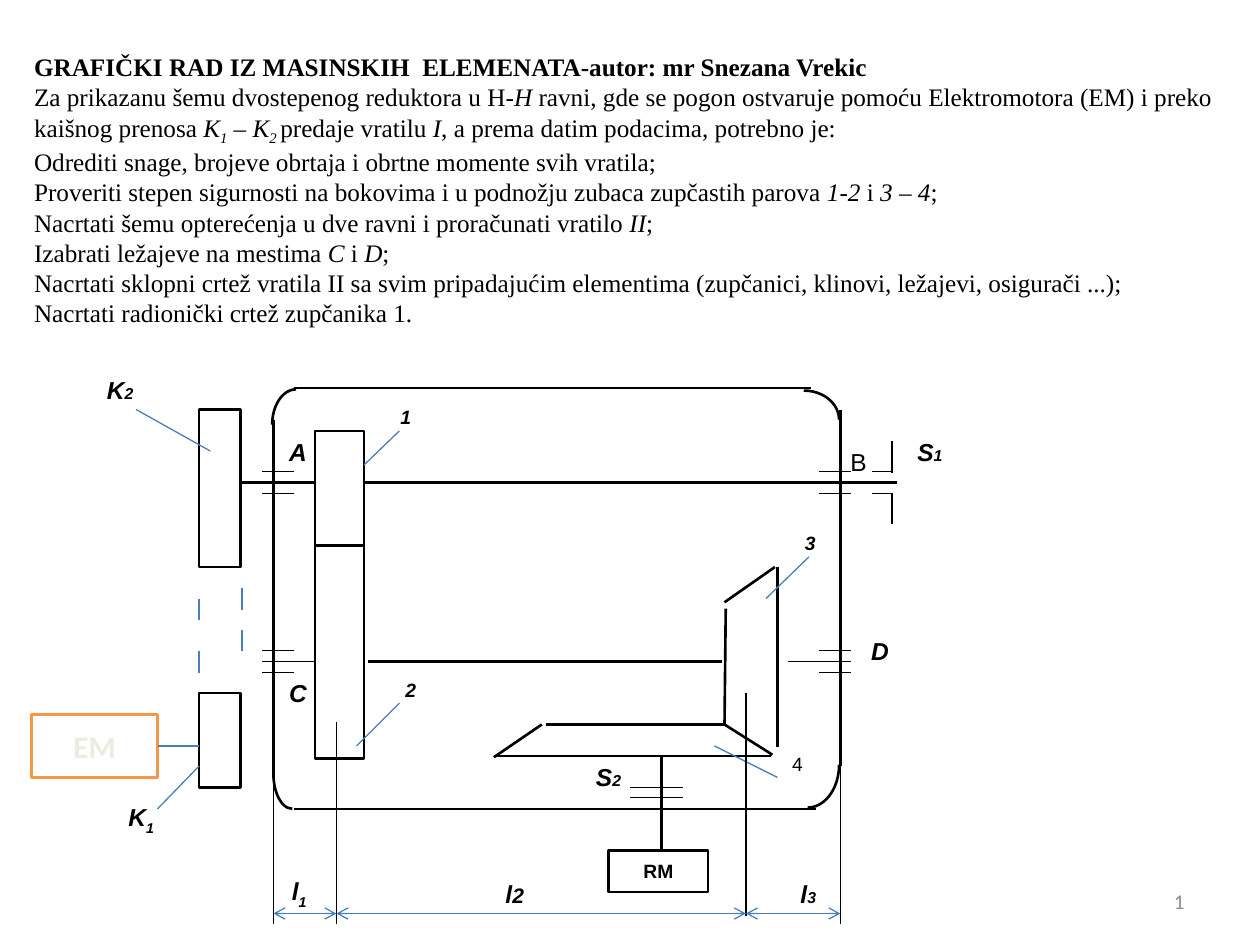
from dataclasses import dataclass
from itertools import pairwise
from lxml.etree import SubElement
from pptx import Presentation
from pptx.dml.color import RGBColor
from pptx.enum.shapes import MSO_CONNECTOR, MSO_SHAPE
from pptx.enum.text import MSO_ANCHOR, MSO_AUTO_SIZE, PP_ALIGN
from pptx.oxml.ns import qn
from pptx.util import Inches, Pt


@dataclass(frozen=True)
class Theme:
    """Colours, fonts and sizes of the slide."""
    ink: str = "000000"
    paper: str = "FFFFFF"
    blue: str = "4B7EBC"
    orange: str = "F79646"
    cream: str = "EEECE1"
    gray: str = "8C8C8C"
    sans: str = "Arial"
    serif: str = "Times New Roman"
    plain: str = "Calibri"
    task: float = 14.4
    name: float = 14
    mark: float = 11
    page: float = 12
    motor: float = 18
    thin: float = 0.75
    bold: float = 1.5


T = Theme()
TASK = (
    "Za prikazanu šemu dvostepenog reduktora u H*-H* ravni, gde se pogon ostvaruje pomoću "
    "Elektromotora (EM) i preko kaišnog prenosa *K~1~ – K~2 ~*predaje vratilu *I*, "
    "a prema datim podacima, potrebno je:",
    "Odrediti snage, brojeve obrtaja i obrtne momente svih vratila;",
    "Proveriti stepen sigurnosti na bokovima i u podnožju zubaca zupčastih parova *1-2* i *3 – 4*;",
    "Nacrtati šemu opterećenja u dve ravni i proračunati vratilo *II*;",
    "Izabrati ležajeve na mestima *C* i *D*;",
    "Nacrtati sklopni crtež vratila II sa svim pripadajućim elementima "
    "(zupčanici, klinovi, ležajevi, osigurači ...);",
    "Nacrtati radionički crtež zupčanika 1.",
)


def write(para, text, size=T.name, face=T.sans, color=T.ink, bold=False, slant=False, sub=None, drop=-30):
    """Add text where *stars* flip italics and ~tildes~ enclose a small or lowered index."""
    for i, part in enumerate(text.split("*")):
        for j, bit in enumerate(part.split("~")):
            if not bit:
                continue
            run = para.add_run()
            run.text = bit
            font = run.font
            font.name, font.bold, font.italic = face, bold, slant != bool(i % 2)
            font.size = Pt(sub if j % 2 and sub else size)
            font.color.rgb = RGBColor.from_string(color)
            if j % 2 and not sub:
                font._element.set("baseline", str(drop * 1000))


@dataclass
class Pane:
    """A region whose parts are placed from its left top corner."""
    slide: object
    left: float
    top: float

    def spot(self, x, y):
        """Turn a point in the region into slide lengths."""
        return Inches(self.left + x), Inches(self.top + y)

    def line(self, x1, y1, x2, y2, color=T.ink, width=T.thin, arrows=False):
        """Draw a straight line."""
        link = self.slide.shapes.add_connector(
            MSO_CONNECTOR.STRAIGHT, *self.spot(x1, y1), *self.spot(x2, y2))
        link.line.color.rgb = RGBColor.from_string(color)
        link.line.width = Pt(width)
        if arrows:
            for end in ("a:headEnd", "a:tailEnd"):
                SubElement(link.line._ln, qn(end)).set("type", "arrow")
        SubElement(link._element.spPr, qn("a:effectLst"))

    def shape(self, kind, x, y, w, h, line=T.ink, width=T.bold):
        """Draw an outlined preset shape without shadow."""
        item = self.slide.shapes.add_shape(kind, *self.spot(x, y), Inches(w), Inches(h))
        item.shadow.inherit = False
        item.line.color.rgb = RGBColor.from_string(line)
        item.line.width = Pt(width)
        return item

    def rect(self, x, y, w, h, text="", line=T.ink, width=T.bold, **style):
        """Draw a white block, with centred text if any."""
        item = self.shape(MSO_SHAPE.RECTANGLE, x, y, w, h, line, width)
        item.fill.solid()
        item.fill.fore_color.rgb = RGBColor.from_string(T.paper)
        if text:
            para = item.text_frame.paragraphs[0]
            para.alignment = PP_ALIGN.CENTER
            write(para, text, bold=True, **style)

    def arc(self, x, y, rx, ry, start):
        """Draw a quarter ellipse about a centre."""
        item = self.shape(MSO_SHAPE.ARC, x - rx, y - ry, 2 * rx, 2 * ry)
        item.fill.background()
        item.adjustments[0] = start * 0.6
        item.adjustments[1] = (start + 90) % 360 * 0.6

    def label(self, text, x, y, w, h, align=PP_ALIGN.CENTER, mid=False, bold=True, slant=True, **style):
        """Place a text label."""
        frame = self.slide.shapes.add_textbox(*self.spot(x, y), Inches(w), Inches(h)).text_frame
        frame.word_wrap = True
        frame.vertical_anchor = MSO_ANCHOR.MIDDLE if mid else MSO_ANCHOR.TOP
        para = frame.paragraphs[0]
        para.alignment = align
        write(para, text, bold=bold, slant=slant, **style)

    def seat(self, x, y, w=0.25, gap=0.17):
        """Draw a bearing as two strokes about a shaft axis."""
        for side in (-gap / 2, gap / 2):
            self.line(x, y + side, x + w, y + side)


def head(slide, x, y, w, h):
    """Fill the title with the task."""
    title = slide.shapes.title
    title.left, title.top, title.width, title.height = map(Inches, (x, y, w, h))
    frame = title.text_frame
    frame.auto_size = MSO_AUTO_SIZE.NONE
    frame.vertical_anchor = MSO_ANCHOR.MIDDLE
    para = frame.paragraphs[0]
    para.alignment = PP_ALIGN.LEFT
    style = dict(size=T.task, face=T.serif, drop=-25)
    write(para, "GRAFIČKI RAD IZ MASINSKIH  ELEMENATA-autor: mr Snezana Vrekic", bold=True, **style)
    for text in TASK:
        para.add_line_break()
        write(para, text, **style)


def belt(box):
    """Draw the motor, pulleys and belt."""
    box.rect(1.33, 0.33, 0.33, 1.25)
    box.rect(1.33, 2.58, 0.33, 0.75)
    box.rect(0, 2.75, 1, 0.5, "EM", line=T.orange, width=2, size=T.motor, face=T.plain, color=T.cream)
    box.line(1, 3, 1.33, 3, T.blue)
    for x, y in ((1.33, 1.83), (1.33, 2.25), (1.67, 1.75), (1.67, 2.08)):
        box.line(x, y, x, y + 0.17, T.blue)
    box.line(0.83, 0.33, 1.42, 0.66, T.blue)
    box.line(1, 3.5, 1.33, 3.16, T.blue)
    box.label("K~2~", 0.5, 0, 0.67, 0.34, PP_ALIGN.LEFT, True, sub=9)
    box.label("K~1~", 0.67, 3.41, 0.67, 0.34, PP_ALIGN.LEFT, True)


def house(box):
    """Draw the gearbox housing."""
    for ends in ((0.16, 0, 4.27, 0), (0.16, 3.34, 4.31, 3.34), (0, 0.25, 0, 3.09), (4.5, 0.17, 4.5, 3)):
        box.line(*ends, width=T.bold)
    box.arc(0.18, 0.29, 0.19, 0.28, 180)
    box.arc(4.21, 0.25, 0.28, 0.23, 270)
    box.arc(4.24, 2.99, 0.25, 0.34, 0)
    box.arc(0.15, 3.06, 0.15, 0.28, 90)


def shaft_one(box):
    """Draw shaft I with bearings A and B and its outer end."""
    box.line(0, 0, 5.2, 0, width=T.bold)
    for x, w in ((0.16, 0.25), (4.58, 0.25), (5, 0.16)):
        box.seat(x, 0, w)
    for side in (-1, 1):
        box.line(5.16, side * 0.08, 5.16, side * 0.33)
    box.label("A", 0.25, -0.41, 0.39, 0.33)
    box.label("B", 4.66, -0.33, 0.47, 0.44, bold=False, slant=False)
    box.label("S~1~", 5.25, -0.41, 0.42, 0.5, sub=9)


def shaft_two(box):
    """Draw shaft II with bearings C and D."""
    box.line(0.84, 0, 3.65, 0, width=1.25)
    box.line(0, 0, 0.42, 0)
    box.line(4.17, 0, 4.67, 0)
    for x in (0, 4.42):
        box.seat(x, 0)
    box.label("C", 0.09, 0.08, 0.39, 0.6)
    box.label("D", 4.67, -0.25, 0.47, 0.44)


def spur(box):
    """Draw the spur gears 1 and 2."""
    box.rect(0, 0, 0.39, 0.92)
    box.rect(0, 0.91, 0.39, 1.69)
    box.line(0.39, 0.27, 0.67, 0, T.blue)
    box.line(0.33, 2.5, 0.67, 2.16, T.blue)
    box.label("1", 0.58, -0.25, 0.47, 0.44, PP_ALIGN.LEFT, size=T.mark)
    box.label("2", 0.58, 1.91, 0.36, 0.32, size=T.mark)


def bevel(box):
    """Draw the bevel gears 3 and 4."""
    for ends in ((2.25, 0, 2.25, 1.43), (1.83, 1.26, 1.84, 0.33), (0.41, 1.25, 1.84, 1.25),
                 (0, 1.5, 2.2, 1.5), (0, 1.51, 0.38, 1.25), (2.23, 0, 1.83, 0.28),
                 (1.83, 1.25, 2.21, 1.49)):
        box.line(*ends, width=T.bold)
    box.line(2.16, 0.25, 2.5, -0.08, T.blue)
    box.line(2.25, 1.67, 1.75, 1.42, T.blue)
    box.label("3", 2.33, -0.33, 0.36, 0.32, size=T.mark)
    box.label("4", 2.16, 1.42, 0.5, 0.29, mid=True, bold=False, slant=False, size=T.mark)


def drive(box):
    """Draw the output shaft and the driven machine."""
    box.line(0.67, 0, 0.67, 0.8, width=T.bold)
    box.seat(0.42, 0.29, 0.42, 0.08)
    box.rect(0.25, 0.75, 0.79, 0.33, "RM", size=T.mark)
    box.label("S~2~", 0, 0, 0.5, 0.47, sub=9)


def span(box):
    """Draw the dimension lines."""
    marks = (0, 0.5, 3.75, 4.5)
    for x, top, end in zip(marks, (0.23, 0.23, 0, 0.23), (1.83, 1.83, 1.77, 1.83)):
        box.line(x, top, x, end)
    for x1, x2 in pairwise(marks):
        box.line(x1, 1.75, x2, 1.75, T.blue, arrows=True)
    for text, x, w, sub in (("l~1~", -0.17, 0.75, None), ("l~2~", 1.5, 0.83, 12), ("l~3~", 3.83, 0.83, 9)):
        box.label(text, x, 1.42, w, 0.34, mid=True, sub=sub)


def foot(box):
    """Place the page number."""
    box.label("1", 0, 0, 2.33, 0.4, PP_ALIGN.RIGHT, True, False, False,
              size=T.page, face=T.plain, color=T.gray)


def main():
    """Build and save the slide."""
    deck = Presentation()
    deck.slide_width, deck.slide_height = Inches(10), Inches(7.5)
    slide = deck.slides.add_slide(deck.slide_layouts[5])
    head(slide, 0.17, 0.42, 9.58, 2.17)
    for draw, x, y in ((belt, 0.25, 2.92), (house, 2.17, 3.08), (shaft_one, 1.92, 3.83),
                       (shaft_two, 2.08, 5.25), (spur, 2.5, 3.42), (bevel, 3.92, 4.5),
                       (drive, 4.58, 6), (span, 2.17, 5.5), (foot, 7.17, 6.95)):
        draw(Pane(slide, x, y))
    deck.save("out.pptx")


if __name__ == "__main__":
    main()
